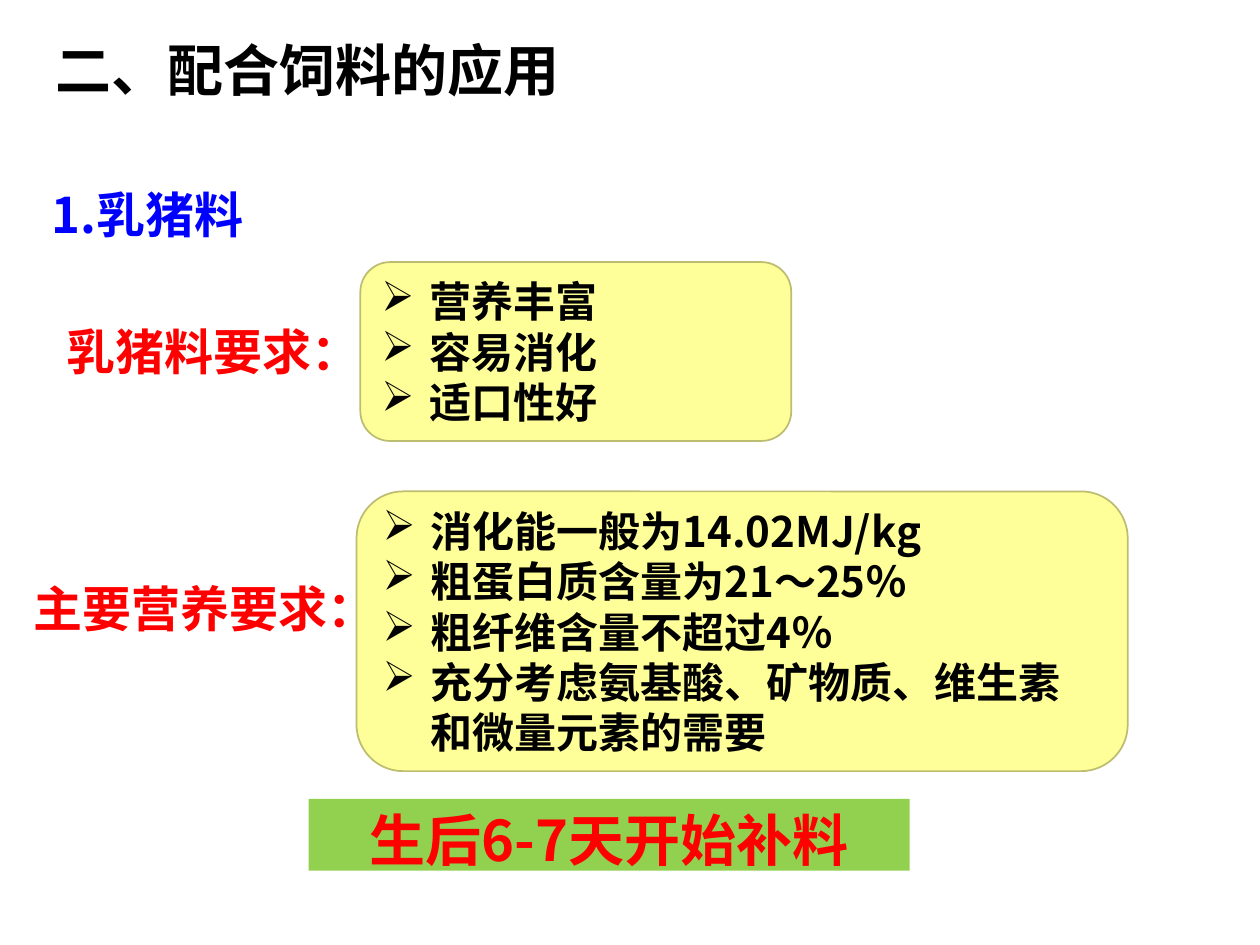
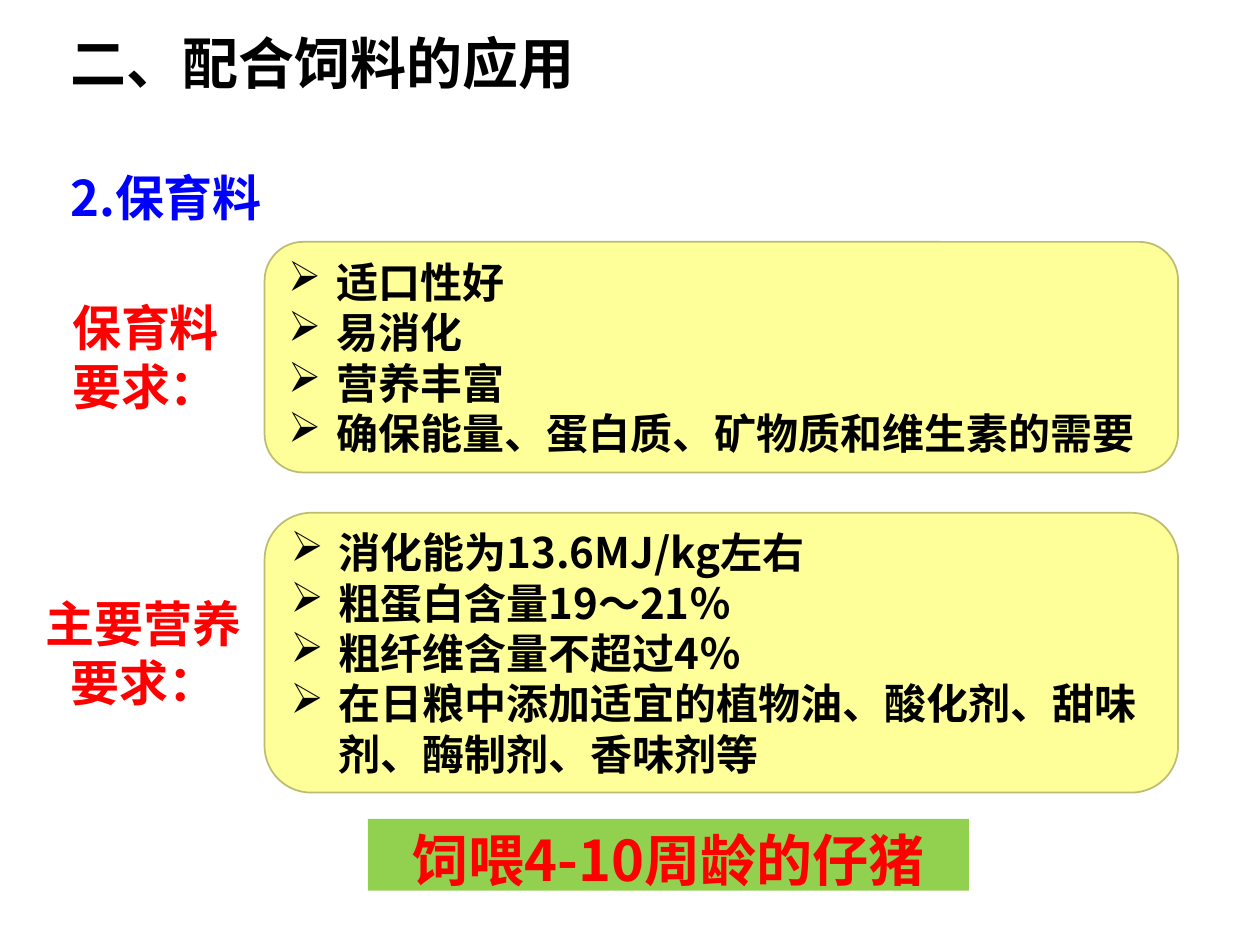
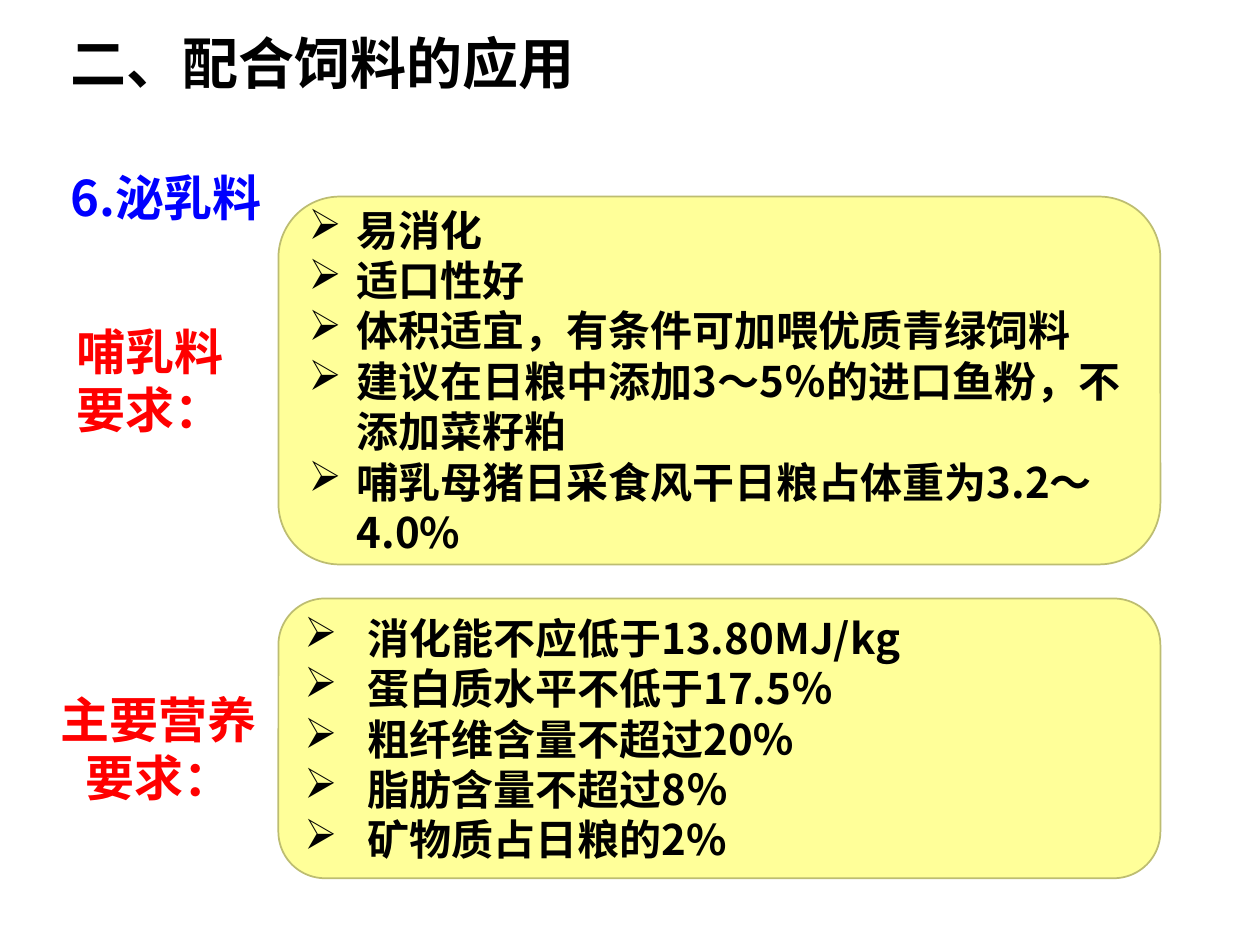
from lxml import etree
from pptx import Presentation
from pptx.dml.color import RGBColor
from pptx.enum import shapes, text
from pptx.oxml import ns
from pptx.util import Inches, Pt

# Shared style
FONT = "Noto Sans CJK SC"
BLACK, WHITE, BLUE, RED = "000000", "FFFFFF", "0000FF", "FF0000"
GREEN, YELLOW, OLIVE = "92D050", "FFFF99", "BDBD71"
CHAPTER = "二、配合饲料的应用"
LEFT, CENTER = text.PP_ALIGN.LEFT, text.PP_ALIGN.CENTER
TOP, MIDDLE = text.MSO_ANCHOR.TOP, text.MSO_ANCHOR.MIDDLE


def color(value):
    return RGBColor.from_string(value)


def write(frame, lines, size, ink, align=LEFT, anchor=TOP, wrap=True):
    """Fill a text frame with one bold paragraph per line."""
    frame.text = "\n".join(lines)
    frame.word_wrap = wrap
    frame.vertical_anchor = anchor
    for paragraph in frame.paragraphs:
        paragraph.alignment = align
        for run in paragraph.runs:
            run.font.size = Pt(size)
            run.font.bold = True
            run.font.color.rgb = color(ink)
            run.font.name = FONT
            east_asian = etree.SubElement(run._r.get_or_add_rPr(), ns.qn("a:ea"))
            east_asian.set("typeface", FONT)


def add_text(slide, place, lines, size, ink, fill=None, **layout):
    box = slide.shapes.add_textbox(*map(Inches, place))
    if fill:
        box.fill.solid()
        box.fill.fore_color.rgb = color(fill)
    write(box.text_frame, lines, size, ink, **layout)


def add_chapter(slide, left, top):
    add_text(slide, (left, top, 4.26, 0.64), [CHAPTER], 32, BLACK, fill=WHITE, wrap=False)


def add_feed_title(slide, left, top, feed):
    add_text(slide, (left, top, 2.9, 0.55), [feed], 28, BLUE, anchor=MIDDLE)


def add_label(slide, place, lines, align=CENTER):
    add_text(slide, place, lines, 28, RED, align=align, wrap=len(lines) > 1)


def add_feeding_time(slide, left, top, message):
    add_text(slide, (left, top, 4.77, 0.57), [message], 32, RED, fill=GREEN, align=CENTER)


def add_requirements(slide, place, items, indent=0.38):
    """Yellow rounded panel with an arrow-bulleted list."""
    panel = slide.shapes.add_shape(
        shapes.MSO_SHAPE.FLOWCHART_ALTERNATE_PROCESS, *map(Inches, place))
    panel.shadow.inherit = False
    panel.fill.solid()
    panel.fill.fore_color.rgb = color(YELLOW)
    panel.line.color.rgb = color(OLIVE)
    panel.line.width = Pt(1)
    write(panel.text_frame, items, 24, BLACK, anchor=MIDDLE)
    for paragraph in panel.text_frame.paragraphs:
        properties = paragraph._p.get_or_add_pPr()
        properties.set("marL", str(Inches(indent)))
        properties.set("indent", str(-Inches(indent)))
        etree.SubElement(properties, ns.qn("a:buChar")).set("char", "➢")


def suckling_feed(slide):
    add_feed_title(slide, 0.31, 1.42, "1.乳猪料")
    add_feeding_time(slide, 2.45, 6.34, "生后6-7天开始补料")
    add_chapter(slide, 0.34, 0.23)
    add_label(slide, (0.43, 2.5, 2.57, 0.57), ["乳猪料要求："], LEFT)
    add_label(slide, (0.17, 4.54, 2.96, 0.57), ["主要营养要求："], LEFT)
    add_requirements(slide, (2.86, 2.08, 3.42, 1.42), ["营养丰富", "容易消化", "适口性好"])
    add_requirements(slide, (2.83, 3.9, 6.12, 2.22), [
        "消化能一般为14.02MJ/kg",
        "粗蛋白质含量为21～25％",
        "粗纤维含量不超过4％",
        "充分考虑氨基酸、矿物质、维生素和微量元素的需要",
    ])


def nursery_feed(slide):
    add_feed_title(slide, 0.46, 1.29, "2.保育料")
    add_feeding_time(slide, 2.92, 6.5, "饲喂4-10周龄的仔猪")
    add_chapter(slide, 0.46, 0.18)
    add_label(slide, (0.37, 2.31, 1.57, 1.04), ["保育料", "要求："])
    add_label(slide, (0.18, 4.66, 1.92, 1.04), ["主要营养", "要求："])
    add_requirements(slide, (2.1, 1.92, 7.25, 1.83), [
        "适口性好",
        "易消化",
        "营养丰富",
        "确保能量、蛋白质、矿物质和维生素的需要",
    ])
    add_requirements(slide, (2.1, 4.07, 7.25, 2.22), [
        "消化能为13.6MJ/kg左右",
        "粗蛋白含量19～21％",
        "粗纤维含量不超过4％",
        "在日粮中添加适宜的植物油、酸化剂、甜味剂、酶制剂、香味剂等",
    ])


def lactation_feed(slide):
    add_feed_title(slide, 0.46, 1.29, "6.泌乳料")
    add_chapter(slide, 0.46, 0.18)
    add_label(slide, (0.51, 2.5, 1.5, 1.04), ["哺乳料", "要求："], LEFT)
    add_label(slide, (0.3, 5.42, 1.92, 1.04), ["主要营养", "要求："])
    add_requirements(slide, (2.21, 1.56, 7, 2.92), [
        "易消化",
        "适口性好",
        "体积适宜，有条件可加喂优质青绿饲料",
        "建议在日粮中添加3～5％的进口鱼粉，不添加菜籽粕",
        "哺乳母猪日采食风干日粮占体重为3.2～4.0%",
    ])
    add_requirements(slide, (2.21, 4.75, 7, 2.22), [
        "消化能不应低于13.80MJ/kg",
        "蛋白质水平不低于17.5％",
        "粗纤维含量不超过20％",
        "脂肪含量不超过8％",
        "矿物质占日粮的2%",
    ], indent=0.5)


def main():
    deck = Presentation()
    deck.slide_width, deck.slide_height = Inches(10), Inches(7.5)
    blank = deck.slide_layouts[6]
    for build in (suckling_feed, nursery_feed, lactation_feed):
        build(deck.slides.add_slide(blank))
    deck.save("out.pptx")


if __name__ == "__main__":
    main()
